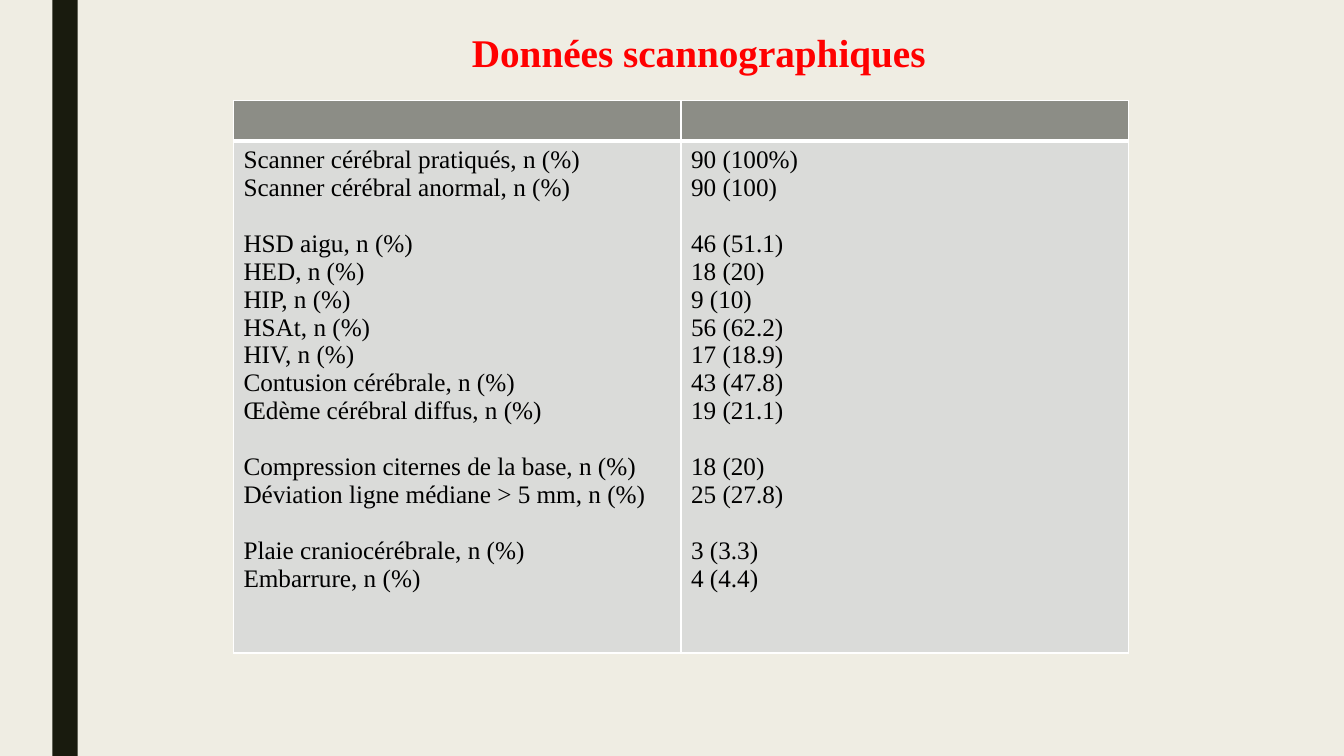
from pptx import Presentation
from pptx.dml.color import RGBColor
from pptx.enum.shapes import MSO_SHAPE
from pptx.enum.text import MSO_ANCHOR, PP_ALIGN
from pptx.oxml import parse_xml
from pptx.oxml.ns import nsdecls
from pptx.util import Inches, Pt

RECTANGLE = MSO_SHAPE.RECTANGLE
TOP = MSO_ANCHOR.TOP
LEFT, CENTER = PP_ALIGN.LEFT, PP_ALIGN.CENTER

SLIDE_WIDTH, SLIDE_HEIGHT = Inches(13.33), Inches(7.5)
FONT = "Times New Roman"
COLORS = {
    "background": "EFEDE3",
    "bar": "191B0E",
    "title": "FF0000",
    "text": "000000",
    "header": "8C8D86",
    "body": "DADBD9",
    "border": "FFFFFF",
}
GROUP_GAP = 20
FINDING_GROUPS = [
    [
        ("Scanner cérébral pratiqués, n (%)", "90 (100%)"),
        ("Scanner cérébral anormal, n (%)", "90 (100)"),
    ],
    [
        ("HSD aigu, n (%)", "46 (51.1)"),
        ("HED, n (%)", "18 (20)"),
        ("HIP, n (%)", "9 (10)"),
        ("HSAt, n (%)", "56 (62.2)"),
        ("HIV, n (%)", "17 (18.9)"),
        ("Contusion cérébrale, n (%)", "43 (47.8)"),
        ("Œdème cérébral diffus, n (%)", "19 (21.1)"),
    ],
    [
        ("Compression citernes de la base, n (%)", "18 (20)"),
        ("Déviation ligne médiane > 5 mm, n (%)", "25 (27.8)"),
    ],
    [
        ("Plaie craniocérébrale, n (%)", "3 (3.3)"),
        ("Embarrure, n (%)", "4 (4.4)"),
    ],
]


def across(percent):
    """Return a percentage of the slide width."""
    return round(SLIDE_WIDTH * percent / 100)


def down(percent):
    """Return a percentage of the slide height."""
    return round(SLIDE_HEIGHT * percent / 100)


def paint(fill, color):
    """Fill solidly with a named colour."""
    fill.solid()
    fill.fore_color.rgb = RGBColor.from_string(COLORS[color])


def write(paragraph, text, size=18, color="text", bold=False, align=LEFT, before=0):
    """Write formatted text into a paragraph."""
    paragraph.alignment = align
    paragraph.space_before = Pt(before)
    run = paragraph.add_run()
    run.text = text
    run.font.name = FONT
    run.font.size = Pt(size)
    run.font.bold = bold
    run.font.color.rgb = RGBColor.from_string(COLORS[color])


def add_bar(slide):
    """Draw the dark vertical bar at the left."""
    bar = slide.shapes.add_shape(RECTANGLE, across(3.9), 0, across(1.88), SLIDE_HEIGHT)
    paint(bar.fill, "bar")
    bar.line.fill.background()
    bar.shadow.inherit = False


def add_title(slide, text):
    """Place and format the title."""
    title = slide.shapes.title
    title.left, title.top = across(10.87), down(3.07)
    title.width, title.height = across(82.97), down(7.6)
    title.text_frame.vertical_anchor = TOP
    write(title.text_frame.paragraphs[0], text, size=28, color="title", bold=True, align=CENTER)


def style_cell(cell, color, bottom_width):
    """Give a cell its borders and fill."""
    properties = cell._tc.get_or_add_tcPr()
    for side, width in {"L": 1, "R": 1, "T": 1, "B": bottom_width}.items():
        properties.append(parse_xml(
            f'<a:ln{side} {nsdecls("a")} w="{Pt(width)}"><a:solidFill>'
            f'<a:srgbClr val="{COLORS["border"]}"/></a:solidFill></a:ln{side}>'
        ))
    paint(cell.fill, color)


def fill_cell(cell, column):
    """List one column of the findings, spaced by group."""
    paragraph = cell.text_frame.paragraphs[0]
    for group_index, group in enumerate(FINDING_GROUPS):
        for line_index, finding in enumerate(group):
            if group_index or line_index:
                paragraph = cell.text_frame.add_paragraph()
            starts_group = group_index > 0 and line_index == 0
            write(paragraph, finding[column], before=GROUP_GAP if starts_group else 0)


def add_findings_table(slide):
    """Build the table of scan findings."""
    header_height, body_height = down(5.33), down(67.73)
    table = slide.shapes.add_table(
        2, 2, across(17.37), down(13.25), across(66.6), header_height + body_height
    ).table
    table.horz_banding = False
    table.rows[0].height, table.rows[1].height = header_height, body_height
    for column in range(2):
        style_cell(table.cell(0, column), "header", 3)
        style_cell(table.cell(1, column), "body", 1)
        fill_cell(table.cell(1, column), column)


def main():
    """Build and save the presentation."""
    presentation = Presentation()
    presentation.slide_width, presentation.slide_height = SLIDE_WIDTH, SLIDE_HEIGHT
    slide = presentation.slides.add_slide(presentation.slide_layouts[5])
    paint(slide.background.fill, "background")
    add_bar(slide)
    add_findings_table(slide)
    add_title(slide, "Données scannographiques ")
    presentation.save("out.pptx")


if __name__ == "__main__":
    main()
